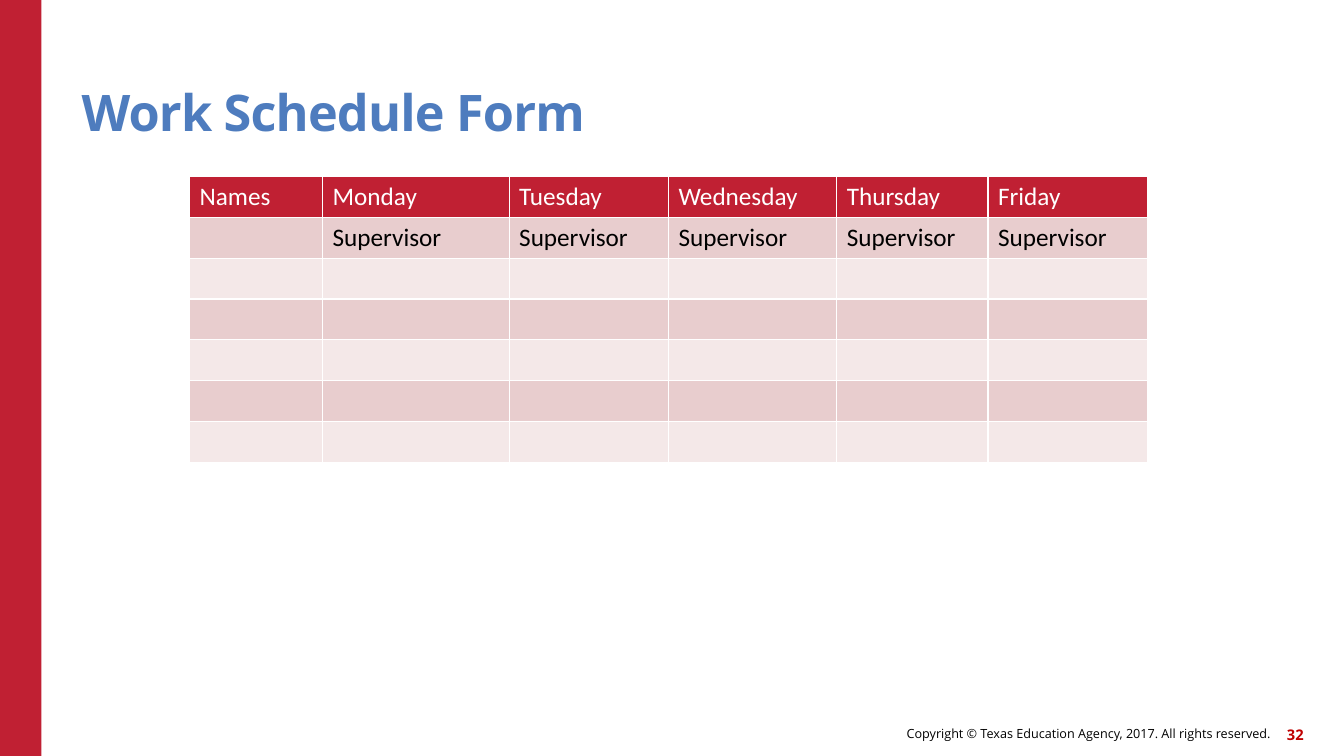
from pptx import Presentation
from pptx.dml.color import RGBColor
from pptx.enum.shapes import MSO_SHAPE
from pptx.enum.text import MSO_ANCHOR, MSO_AUTO_SIZE, PP_ALIGN
from pptx.util import Inches, Pt

RED = RGBColor(0xC0, 0x20, 0x33)
DARK_RED = RGBColor(0xC0, 0x00, 0x00)
BLUE = RGBColor(0x4E, 0x7C, 0xBE)
PINK = RGBColor(0xE8, 0xCD, 0xCE)
PALE_PINK = RGBColor(0xF4, 0xE8, 0xE8)
WHITE = RGBColor(0xFF, 0xFF, 0xFF)
BLACK = RGBColor(0x00, 0x00, 0x00)


def add_run(p, text, font, size, color, bold=False):
    r = p.add_run()
    r.text = text
    r.font.name = font
    r.font.size = Pt(size)
    r.font.color.rgb = color
    r.font.bold = bold
    return r


def set_frame(tf, anchor):
    tf.margin_left = tf.margin_right = tf.margin_top = tf.margin_bottom = 0
    tf.word_wrap = True
    tf.auto_size = MSO_AUTO_SIZE.NONE
    tf.vertical_anchor = anchor


prs = Presentation()
prs.slide_width, prs.slide_height = Inches(13.33), Inches(7.5)
s = prs.slides.add_slide(prs.slide_layouts[5])

# Red side bar
bar = s.shapes.add_shape(MSO_SHAPE.RECTANGLE, 0, 0, Inches(0.41), prs.slide_height)
bar.shadow.inherit = False
bar.fill.solid()
bar.fill.fore_color.rgb = RED
bar.line.fill.background()

# Title
title = s.shapes.title
title.left, title.top = Inches(0.81), Inches(0.45)
title.width, title.height = Inches(11), Inches(0.96)
set_frame(title.text_frame, MSO_ANCHOR.BOTTOM)
p = title.text_frame.paragraphs[0]
p.alignment = PP_ALIGN.LEFT
p.line_spacing = 0.9
r = add_run(p, "Work Schedule Form", "Open Sans", 36, BLUE, True)
r.font._element.set("spc", "-60")

# Schedule table: header, supervisor row, then empty rows
days = ["Monday", "Tuesday", "Wednesday", "Thursday", "Friday"]
rows = [["Names"] + days, [""] + ["Supervisor"] * len(days)]
rows += [[""] * (len(days) + 1)] * 5
widths = [1.32, 1.85, 1.58, 1.67, 1.5, 1.58]
table = s.shapes.add_table(len(rows), len(widths), Inches(1.88), Inches(1.75),
                           Inches(9.5), Inches(2.83)).table
for col, width in zip(table.columns, widths):
    col.width = Inches(width)
for i, texts in enumerate(rows):
    fill = RED if i == 0 else PINK if i % 2 else PALE_PINK
    for j, text in enumerate(texts):
        cell = table.cell(i, j)
        cell.fill.solid()
        cell.fill.fore_color.rgb = fill
        if text:
            add_run(cell.text_frame.paragraphs[0], text, "Calibri", 18,
                    WHITE if i == 0 else BLACK)

# Footer: copyright line and slide number
footer = [
    ("Copyright © Texas Education Agency, 2017. All rights reserved.",
     6.14, 7.12, 6.46, 9, BLACK, False),
    ("32", 12.51, 7.13, 0.42, 10.5, DARK_RED, True),
]
for text, left, top, width, size, color, bold in footer:
    tf = s.shapes.add_textbox(Inches(left), Inches(top), Inches(width),
                              Inches(0.32)).text_frame
    set_frame(tf, MSO_ANCHOR.MIDDLE)
    p = tf.paragraphs[0]
    p.alignment = PP_ALIGN.RIGHT
    add_run(p, text, "Open Sans", size, color, bold)

prs.save("out.pptx")
